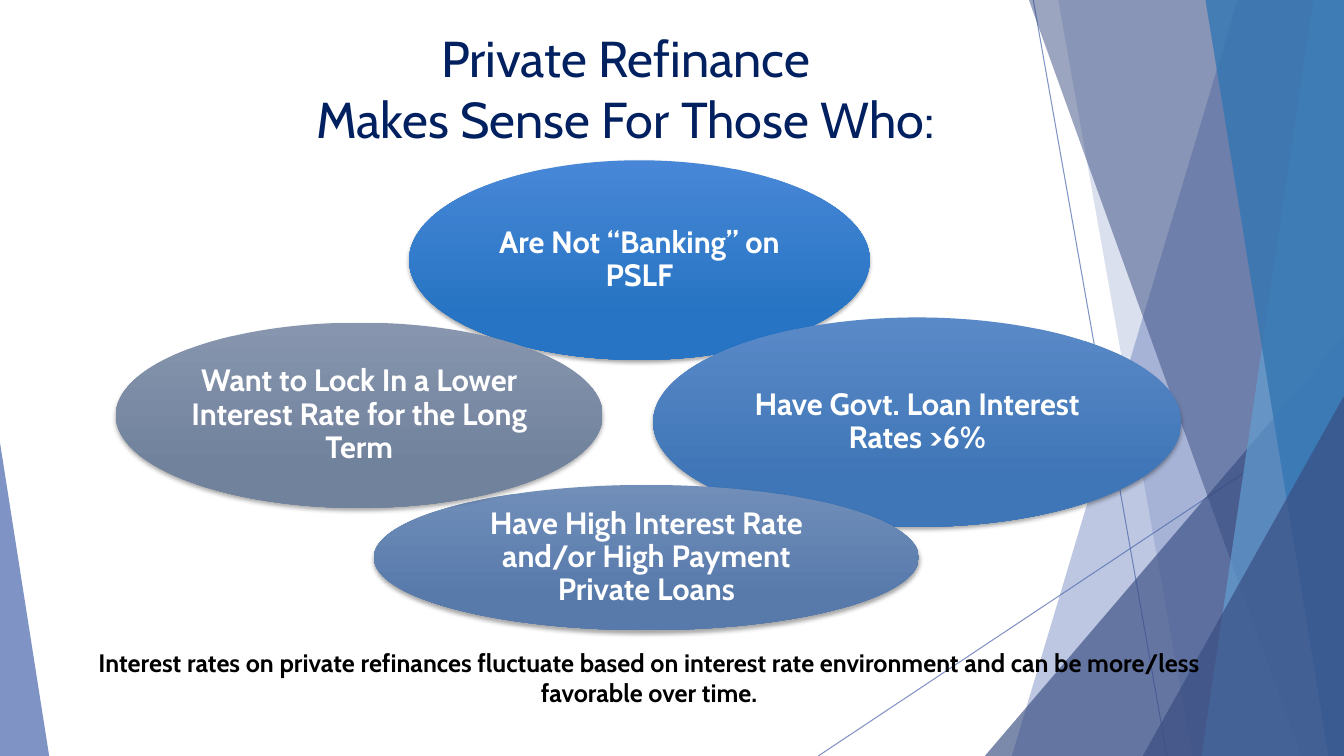
from lxml.etree import SubElement
from pptx import Presentation
from pptx.dml.color import RGBColor
from pptx.enum.shapes import MSO_CONNECTOR, MSO_SHAPE
from pptx.enum.text import MSO_ANCHOR, PP_ALIGN
from pptx.oxml.ns import qn
from pptx.util import Cm, Pt

WHITE = RGBColor(0xFF, 0xFF, 0xFF)
BLACK = RGBColor(0, 0, 0)
NAVY = RGBColor(0x00, 0x20, 0x60)
BLUE = RGBColor(0x4A, 0x66, 0xAC)
DARK = RGBColor(0x38, 0x4C, 0x81)
SKY = RGBColor(0x62, 0x9D, 0xD1)
OCEAN = RGBColor(0x34, 0x77, 0xB2)
FONT = "Cabin"
WIDE, HIGH = 33.87, 19.05

TITLE = "Private Refinance\vMakes Sense For Those Who:"
NOTE = ("Interest rates on private refinances fluctuate based on interest rate "
        "environment and can be more/less favorable over time.")

# Lengths in cm
LINES = [(26.04, 0, 29.41, HIGH), (WIDE, 10.24, 20.62, HIGH)]

# Bands reach the right edge: x at top, x at bottom, colour, opacity %
# Wedges stand on the bottom edge: left, top, width, apex, colour, opacity %
DECOR = [
    ("band", 31.19, 25.5, BLUE, 36),
    ("band", 26.67, 30.05, BLUE, 20),
    ("wedge", 24.82, 8.46, 9.05, 1, DARK, 66),
    ("band", 25.93, 32.79, DARK, 50),
    ("band", 33.1, 30.28, SKY, 70),
    ("band", 30.38, 33.48, OCEAN, 80),
    ("wedge", 28.8, 9.98, 5.07, 1, DARK, 66),
    ("wedge", 0, 11.15, 1.24, 0, BLUE, 70),
]

# Text, left, top, width, height, upper colour, lower colour
OVALS = [
    ("Are Not “Banking” on PSLF", 10.31, 4.04, 11.61, 5.03,
     RGBColor(0x48, 0x87, 0xD7), RGBColor(0x26, 0x74, 0xC3)),
    ("Have Govt. Loan Interest Rates >6%", 16.46, 8, 13.31, 5.28,
     RGBColor(0x5A, 0x89, 0xC7), RGBColor(0x3F, 0x76, 0xB7)),
    ("Have High Interest Rate and/or High Payment Private Loans",
     9.42, 12.22, 13.74, 3.66,
     RGBColor(0x71, 0x8E, 0xB9), RGBColor(0x57, 0x7A, 0xAB)),
    ("Want to Lock In a Lower Interest Rate for the Long Term",
     2.92, 8.13, 12.27, 4.67,
     RGBColor(0x87, 0x96, 0xAE), RGBColor(0x71, 0x82, 0x9D)),
]


def fade(fill, value):
    """Set the opacity, in percent, of a solid fill."""
    color = fill._xPr.find(qn("a:solidFill"))[0]
    SubElement(color, qn("a:alpha"), val=str(value * 1000))


def paint(shape, color, value):
    shape.shadow.inherit = False
    shape.fill.solid()
    shape.fill.fore_color.rgb = color
    fade(shape.fill, value)
    shape.line.fill.background()


def add_line(shapes, ends):
    line = shapes.add_connector(MSO_CONNECTOR.STRAIGHT, *map(Cm, ends))
    line.line.width = Pt(0.75)
    line.line.color.rgb = BLUE
    fade(line.line.fill, 70)
    SubElement(line._element.spPr, qn("a:effectLst"))


def add_band(shapes, top, base, color, value):
    path = shapes.build_freeform(Cm(top), 0)
    path.add_line_segments([(Cm(WIDE), 0), (Cm(WIDE), Cm(HIGH)), (Cm(base), Cm(HIGH))])
    paint(path.convert_to_shape(), color, value)


def add_wedge(shapes, left, top, width, apex, color, value):
    shape = shapes.add_shape(MSO_SHAPE.ISOSCELES_TRIANGLE,
                             *map(Cm, (left, top, width, HIGH - top)))
    shape.adjustments[0] = apex
    paint(shape, color, value)


def write(shape, text, size, color, bold):
    frame = shape.text_frame
    frame.word_wrap = True
    frame.text = text
    para = frame.paragraphs[0]
    para.alignment = PP_ALIGN.CENTER
    for run in para.runs:
        font = run.font
        font.name, font.size, font.bold = FONT, Pt(size), bold
        font.color.rgb = color
    return frame


def add_oval(shapes, text, left, top, width, height, upper, lower):
    oval = shapes.add_shape(MSO_SHAPE.OVAL, *map(Cm, (left, top, width, height)))
    oval.line.fill.background()
    oval.fill.gradient()
    oval.fill.gradient_angle = 270
    for stop, place, color in zip(oval.fill.gradient_stops, (0, 0.78), (upper, lower)):
        stop.position = place
        stop.color.rgb = color

    oval.shadow.inherit = False
    effects = oval._element.spPr.find(qn("a:effectLst"))
    shade = SubElement(effects, qn("a:outerShdw"), blurRad=str(Pt(3)),
                       dist=str(Pt(2)), dir="5400000", rotWithShape="0")
    black = SubElement(shade, qn("a:srgbClr"), val=str(BLACK))
    SubElement(black, qn("a:alpha"), val="35000")

    frame = write(oval, text, 22, WHITE, True)
    frame.vertical_anchor = MSO_ANCHOR.MIDDLE
    frame.margin_left = frame.margin_right = Cm(0.08)
    frame.margin_top = frame.margin_bottom = Cm(0.08)
    frame.paragraphs[0].line_spacing = 0.9


def main():
    deck = Presentation()
    deck.slide_width, deck.slide_height = Cm(WIDE), Cm(HIGH)
    shapes = deck.slides.add_slide(deck.slide_layouts[6]).shapes

    for ends in LINES:
        add_line(shapes, ends)
    makers = {"band": add_band, "wedge": add_wedge}
    for kind, *parts in DECOR:
        makers[kind](shapes, *parts)

    title = shapes.add_textbox(Cm(6.05), Cm(0.56), Cm(19.43), Cm(3.66))
    write(title, TITLE, 36, NAVY, False)
    for oval in OVALS:
        add_oval(shapes, *oval)
    note = shapes.add_textbox(Cm(0.97), Cm(16.18), Cm(30.78), Cm(1.8))
    write(note, NOTE, 18, BLACK, True)

    deck.save("out.pptx")


if __name__ == "__main__":
    main()
